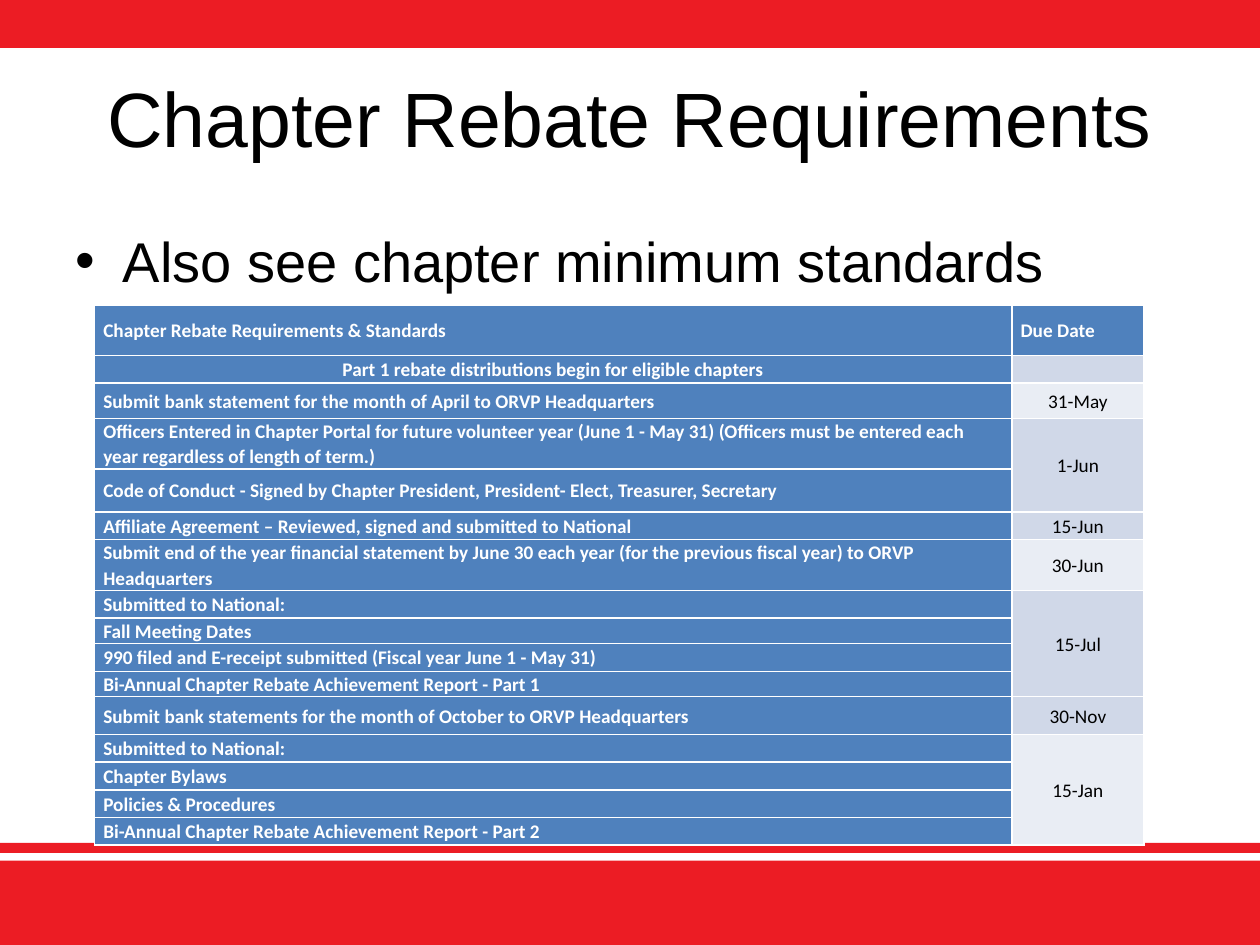
"""Build the chapter rebate requirements slide."""
import pptx
import pptx.dml.color
import pptx.enum.shapes
import pptx.enum.text
import pptx.util

Inches, Pt = pptx.util.Inches, pptx.util.Pt
ALIGN = pptx.enum.text.PP_ALIGN
MIDDLE = pptx.enum.text.MSO_ANCHOR.MIDDLE
RECT = pptx.enum.shapes.MSO_SHAPE.RECTANGLE

HUES = {"red": "EC1C24", "blue": "4F81BD", "odd": "D0D8E8",
        "even": "E9EDF4", "white": "FFFFFF", "black": "000000"}
TITLE = "Chapter Rebate Requirements"
BODY = "Also see chapter minimum standards"
BANDS = [(0, 0.37, 2), (6.83, 0.67, 0), (6.69, 0.08, 0)]
COLS = [7.28, 1.05]
GROUPS = [
    ("Due Date", [("Chapter Rebate Requirements & Standards", 0.4)]),
    ("", [("Part 1 rebate distributions begin for eligible chapters", 0.22)]),
    ("31-May", [("Submit bank statement for the month of April to ORVP Headquarters", 0.28)]),
    ("1-Jun", [
        ("Officers Entered in Chapter Portal for future volunteer year (June 1 - May 31) "
         "(Officers must be entered each year regardless of length of term.)", 0.32),
        ("Code of Conduct - Signed by Chapter President, President- Elect, "
         "Treasurer, Secretary", 0.34)]),
    ("15-Jun", [("Affiliate Agreement – Reviewed, signed and submitted to National", 0.22)]),
    ("30-Jun", [("Submit end of the year financial statement by June 30 each year "
                 "(for the previous fiscal year) to ORVP Headquarters", 0.32)]),
    ("15-Jul", [
        ("Submitted to National:", 0.22),
        ("Fall Meeting Dates", 0.19),
        ("990 filed and E-receipt submitted (Fiscal year June 1 - May 31)", 0.22),
        ("Bi-Annual Chapter Rebate Achievement Report - Part 1", 0.2)]),
    ("30-Nov", [("Submit bank statements for the month of October to ORVP Headquarters", 0.3)]),
    ("15-Jan", [
        ("Submitted to National:", 0.22),
        ("Chapter Bylaws", 0.22),
        ("Policies & Procedures", 0.22),
        ("Bi-Annual Chapter Rebate Achievement Report - Part 2", 0.22)]),
]


def hue(name):
    return pptx.dml.color.RGBColor.from_string(HUES[name])


def style(para, face, size, ink, bold=False):
    font = para.font
    font.name, font.size, font.bold = face, Pt(size), bold
    font.color.rgb = hue(ink)


def place(shape, text, box, size):
    shape.left, shape.top, shape.width, shape.height = map(Inches, box)
    shape.text_frame.text = text
    style(shape.text_frame.paragraphs[0], "Arial", size, "black")


def draw_band(slide, top, height, line):
    band = slide.shapes.add_shape(RECT, 0, Inches(top), Inches(10), Inches(height))
    band.shadow.inherit = False
    band.fill.solid()
    band.fill.fore_color.rgb = hue("red")
    if line:
        band.line.color.rgb = hue("red")
        band.line.width = Pt(line)
    else:
        band.line.fill.background()


def fill_cell(cell, text, fill, ink, bold, align):
    cell.fill.solid()
    cell.fill.fore_color.rgb = hue(fill)
    cell.vertical_anchor = MIDDLE
    cell.margin_left = cell.margin_right = Inches(0.07)
    cell.margin_top = cell.margin_bottom = 0
    cell.text = text
    para = cell.text_frame.paragraphs[0]
    para.alignment, para.line_spacing = align, 1.07
    style(para, "Calibri", 11, ink, bold)


def draw_table(slide):
    count = sum(len(tasks) for _, tasks in GROUPS)
    table = slide.shapes.add_table(count, len(COLS), Inches(0.75), Inches(2.42),
                                   Inches(sum(COLS)), Inches(4.22)).table
    table.horz_banding = False
    for col, width in zip(table.columns, COLS):
        col.width = Inches(width)
    row = 0
    for date, tasks in GROUPS:
        first, last = row, row + len(tasks) - 1
        for text, height in tasks:
            table.rows[row].height = Inches(height)
            align = ALIGN.LEFT if date else ALIGN.CENTER
            fill_cell(table.cell(row, 0), text, "blue", "white", True, align)
            shade = "odd" if first % 2 else "even"
            look = (shade, "black", False, ALIGN.CENTER) if first else (
                "blue", "white", True, ALIGN.LEFT)
            fill_cell(table.cell(row, 1), date if row == first else "", *look)
            row += 1
        if last > first:
            table.cell(first, 1).merge(table.cell(last, 1))


def main():
    deck = pptx.Presentation()
    deck.slide_width, deck.slide_height = Inches(10), Inches(7.5)
    slide = deck.slides.add_slide(deck.slide_layouts[1])
    place(slide.shapes.title, TITLE, (0.5, 0.3, 9, 1.25), 44)
    place(slide.placeholders[1], BODY, (0.5, 1.75, 9, 4.95), 32)
    for band in BANDS:
        draw_band(slide, *band)
    draw_table(slide)
    deck.save("out.pptx")


if __name__ == "__main__":
    main()
